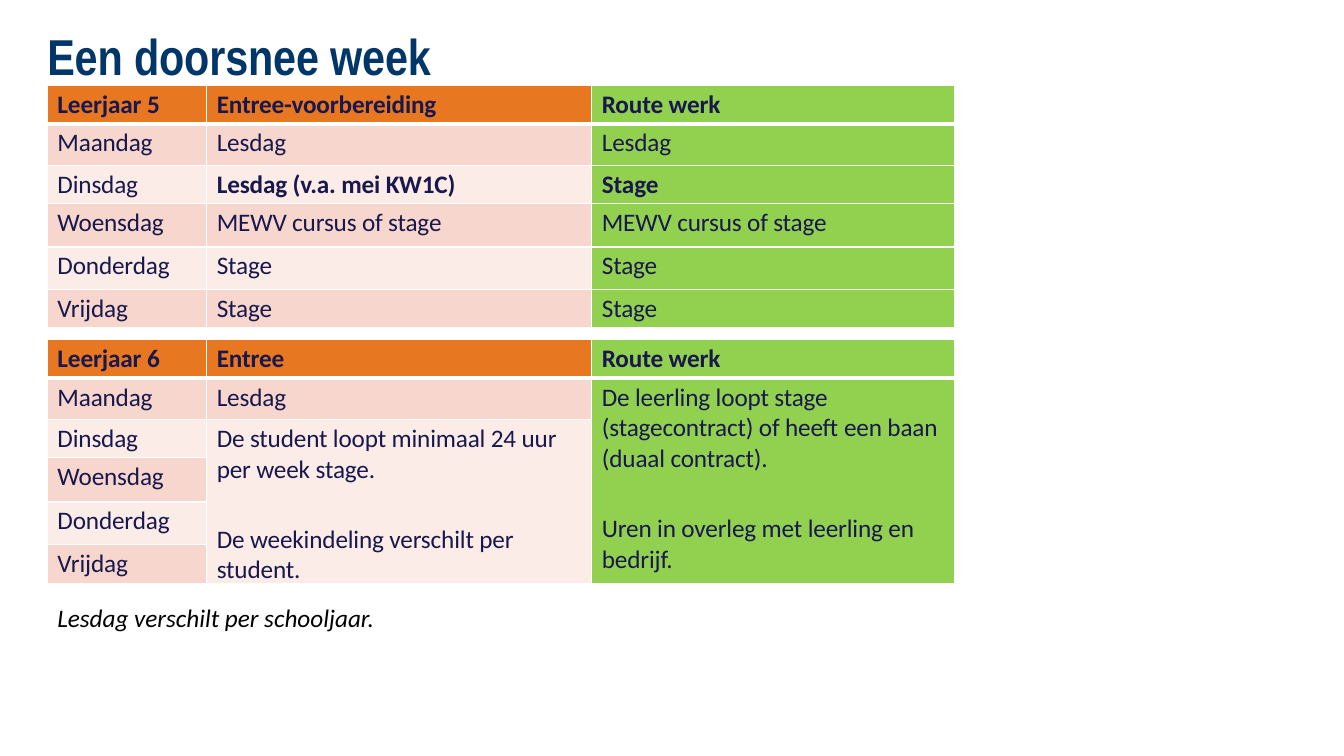
from lxml.etree import SubElement
from pptx import Presentation
from pptx.dml.color import RGBColor
from pptx.enum.text import MSO_ANCHOR as Anchor
from pptx.oxml.ns import qn
from pptx.util import Pt

PX = 9144  # 100 px to the inch
ORANGE, GREEN, WHITE = "E87722", "92D050", "FFFFFF"
BANDS = ["FBECE8", "F6D6CD"]
NAVY = "18184D"
COLUMNS = [158, 382, 360]
DAYS = ["Maandag", "Dinsdag", "Woensdag", "Donderdag", "Vrijdag"]
LEFT = 47


def color(value):
    return RGBColor.from_string(value)


def write(frame, text, *, font="Calibri", size=18, fill=NAVY, bold=False,
          italic=False, tracking=0, before=0, margins=None):
    frame.word_wrap = True
    if margins:
        (frame.margin_left, frame.margin_top,
         frame.margin_right, frame.margin_bottom) = [side * PX for side in margins]
    for index, line in enumerate(text.split("\n")):
        para = frame.add_paragraph() if index else frame.paragraphs[0]
        if index:
            para.space_before = Pt(before)
        span = para.add_run()
        span.text = line
        span.font.name = font
        span.font.size = Pt(size)
        span.font.bold = bold
        span.font.italic = italic
        span.font.color.rgb = color(fill)
        if tracking:
            span._r.get_or_add_rPr().set("spc", str(tracking))


deck = Presentation()
deck.slide_width, deck.slide_height = 1333 * PX, 750 * PX
page = deck.slides.add_slide(deck.slide_layouts[6])

# Title
title = page.shapes.add_textbox(LEFT * PX, 23 * PX, 900 * PX, 62 * PX).text_frame
title.vertical_anchor = Anchor.MIDDLE
write(title, "Een doorsnee week", font="Arial Narrow", size=36, fill="003668",
      bold=True, tracking=-10, margins=(0, 1, 0, 0))

# Week schedules: top, row heights, header, (second, third) column per day,
# bold cells, and merged cells as {(row, column): last row}
schedules = [
    (85, [38, 41, 38, 43, 42, 38],
     ["Leerjaar 5", "Entree-voorbereiding", "Route werk"],
     [("Lesdag", "Lesdag"),
      ("Lesdag (v.a. mei KW1C)", "Stage"),
      ("MEWV cursus of stage", "MEWV cursus of stage"),
      ("Stage", "Stage"),
      ("Stage", "Stage")],
     [(2, 1), (2, 2)], {}),
    (337, [38, 41, 38, 44, 42, 38],
     ["Leerjaar 6", "Entree", "Route werk"],
     [("Lesdag", "De leerling loopt stage (stagecontract) of heeft een baan "
                 "(duaal contract).\nUren in overleg met leerling en bedrijf."),
      ("De student loopt minimaal 24 uur per week stage.\n"
       "De weekindeling verschilt per student.", ""),
      ("", ""), ("", ""), ("", "")],
     [], {(1, 2): 5, (2, 1): 5}),
]

for top, heights, header, entries, bold_cells, merges in schedules:
    rows = [header] + [[day, *entry] for day, entry in zip(DAYS, entries)]
    table = page.shapes.add_table(
        len(rows), len(COLUMNS), LEFT * PX, top * PX,
        sum(COLUMNS) * PX, sum(heights) * PX).table
    table.horz_banding = False
    for column, width in zip(table.columns, COLUMNS):
        column.width = width * PX
    for row, height in zip(table.rows, heights):
        row.height = height * PX
    for (first, column), last in merges.items():
        table.cell(first, column).merge(table.cell(last, column))

    for r, texts in enumerate(rows):
        for c, text in enumerate(texts):
            cell = table.cell(r, c)
            # White borders, thick between the header and the days
            weights = {"L": 1, "R": 1, "T": 3 if r == 1 else 1, "B": 3 if r == 0 else 1}
            properties = cell._tc.get_or_add_tcPr()
            for side, weight in weights.items():
                border = SubElement(properties, qn("a:ln" + side), w=str(Pt(weight)))
                paint = SubElement(border, qn("a:solidFill"))
                SubElement(paint, qn("a:srgbClr"), val=WHITE)
            # Fill and text
            cell.fill.solid()
            left_fill = BANDS[r % 2] if r else ORANGE
            cell.fill.fore_color.rgb = color(GREEN if c == 2 else left_fill)
            cell.margin_left, cell.margin_top = 10 * PX, 4 * PX
            cell.margin_right = cell.margin_bottom = 0
            if text:
                write(cell.text_frame, text, bold=r == 0 or (r, c) in bold_cells,
                      tracking=-10, before=28)

# Footnote
note = page.shapes.add_textbox(LEFT * PX, 593 * PX, 375 * PX, 40 * PX).text_frame
write(note, "Lesdag verschilt per schooljaar.", fill="000000", italic=True)

deck.save("out.pptx")
